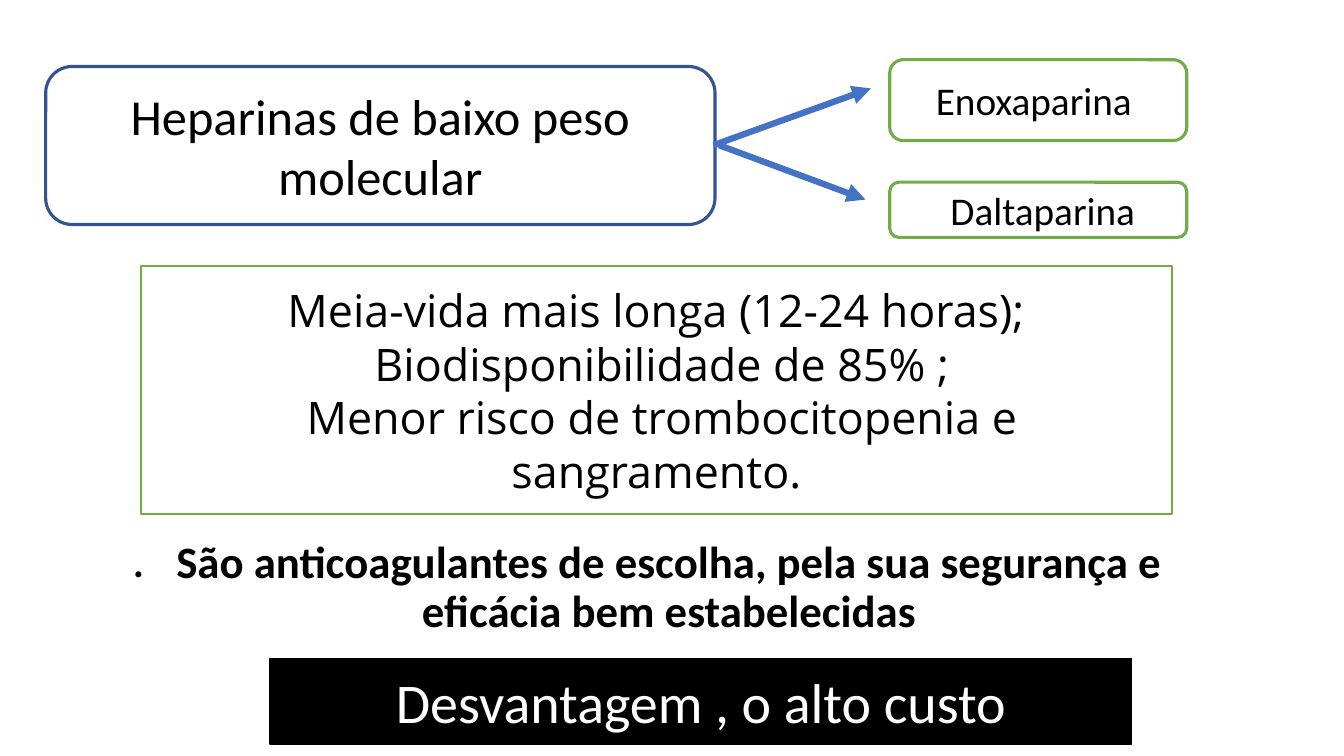
"""Builds a slide on low molecular weight heparins."""
from lxml.etree import SubElement
from pptx import Presentation
from pptx.dml.color import RGBColor
from pptx.enum.shapes import MSO_CONNECTOR, MSO_SHAPE
from pptx.enum.text import MSO_ANCHOR as Anchor, PP_ALIGN as Align
from pptx.oxml.ns import qn
from pptx.util import Inches, Pt

BLACK = RGBColor(0x00, 0x00, 0x00)
WHITE = RGBColor(0xFF, 0xFF, 0xFF)
NAVY = RGBColor(0x32, 0x54, 0x91)
BLUE = RGBColor(0x44, 0x72, 0xC4)
GREEN = RGBColor(0x70, 0xAD, 0x47)
ROUND, RECT = MSO_SHAPE.ROUNDED_RECTANGLE, MSO_SHAPE.RECTANGLE
WIDTH, HEIGHT = Inches(13.33), Inches(7.5)

FACTS = [
    "Meia-vida mais longa (12-24 horas);",
    " Biodisponibilidade de 85% ;",
    " Menor risco de trombocitopenia e sangramento.",
]
# Areas and points are percentages of the slide's width and height.
NOTES = [
    ((9.1, 57.6, 20, 20.9), ".", 36, False, Align.LEFT, Anchor.BOTTOM, 0),
    ((10.4, 70.8, 78.8, 22.7),
     "São anticoagulantes de escolha, pela sua segurança e eficácia bem estabelecidas",
     32, True, Align.CENTER, Anchor.TOP, 10),
]
BOXES = [
    (ROUND, (3.4, 8.8, 49.8, 20.9), ["Heparinas de baixo peso molecular"],
     36, "Calibri", BLACK, None, NAVY, 2.25),
    (ROUND, (66.2, 7.9, 22.1, 10.7), ["Enoxaparina "],
     28, "Calibri", BLACK, WHITE, GREEN, 2.25),
    (ROUND, (66.2, 24.1, 22.1, 7.3), [" Daltaparina"],
     28, "Calibri", BLACK, WHITE, GREEN, 2.25),
    (RECT, (10.5, 35.2, 76.7, 32.8), FACTS,
     32, "Open Sans", BLACK, WHITE, GREEN, 1),
    (RECT, (20.1, 87.1, 64.1, 11.3), ["Desvantagem , o alto custo"],
     40, "Calibri", WHITE, BLACK, BLACK, 1),
]
ARROWS = [(53.1, 19.2, 64.8, 11.7), (53.5, 19.2, 64.4, 26.4)]


def place(shares):
    return [int(share * side / 100) for share, side in zip(shares, (WIDTH, HEIGHT) * 2)]


def write(frame, lines, size, font, color, align, anchor, bold=False):
    frame.word_wrap = True
    frame.vertical_anchor = anchor
    for index, line in enumerate(lines):
        para = frame.add_paragraph() if index else frame.paragraphs[0]
        para.text = line
        para.alignment = align
        para.font.size, para.font.name = Pt(size), font
        para.font.bold = bold
        para.font.color.rgb = color


def add_note(page, area, text, size, bold, align, anchor, before):
    frame = page.shapes.add_textbox(*place(area)).text_frame
    write(frame, [text], size, "Calibri", BLACK, align, anchor, bold)
    frame.paragraphs[0].line_spacing = 0.9
    frame.paragraphs[0].space_before = Pt(before)


def add_box(page, kind, area, lines, size, font, color, fill, edge, weight):
    box = page.shapes.add_shape(kind, *place(area))
    box.shadow.inherit = False
    if fill is None:
        box.fill.background()
    else:
        box.fill.solid()
        box.fill.fore_color.rgb = fill
    box.line.color.rgb = edge
    box.line.width = Pt(weight)
    write(box.text_frame, lines, size, font, color, Align.CENTER, Anchor.MIDDLE)


def add_arrow(page, ends):
    arrow = page.shapes.add_connector(MSO_CONNECTOR.STRAIGHT, *place(ends))
    arrow.line.color.rgb = BLUE
    arrow.line.width = Pt(4.5)
    SubElement(arrow.line._get_or_add_ln(), qn("a:tailEnd"), type="triangle")
    SubElement(arrow._element.spPr, qn("a:effectLst"))


def main():
    deck = Presentation()
    deck.slide_width, deck.slide_height = WIDTH, HEIGHT
    page = deck.slides.add_slide(deck.slide_layouts[6])
    for note in NOTES:
        add_note(page, *note)
    for box in BOXES:
        add_box(page, *box)
    for ends in ARROWS:
        add_arrow(page, ends)
    deck.save("out.pptx")


if __name__ == "__main__":
    main()
